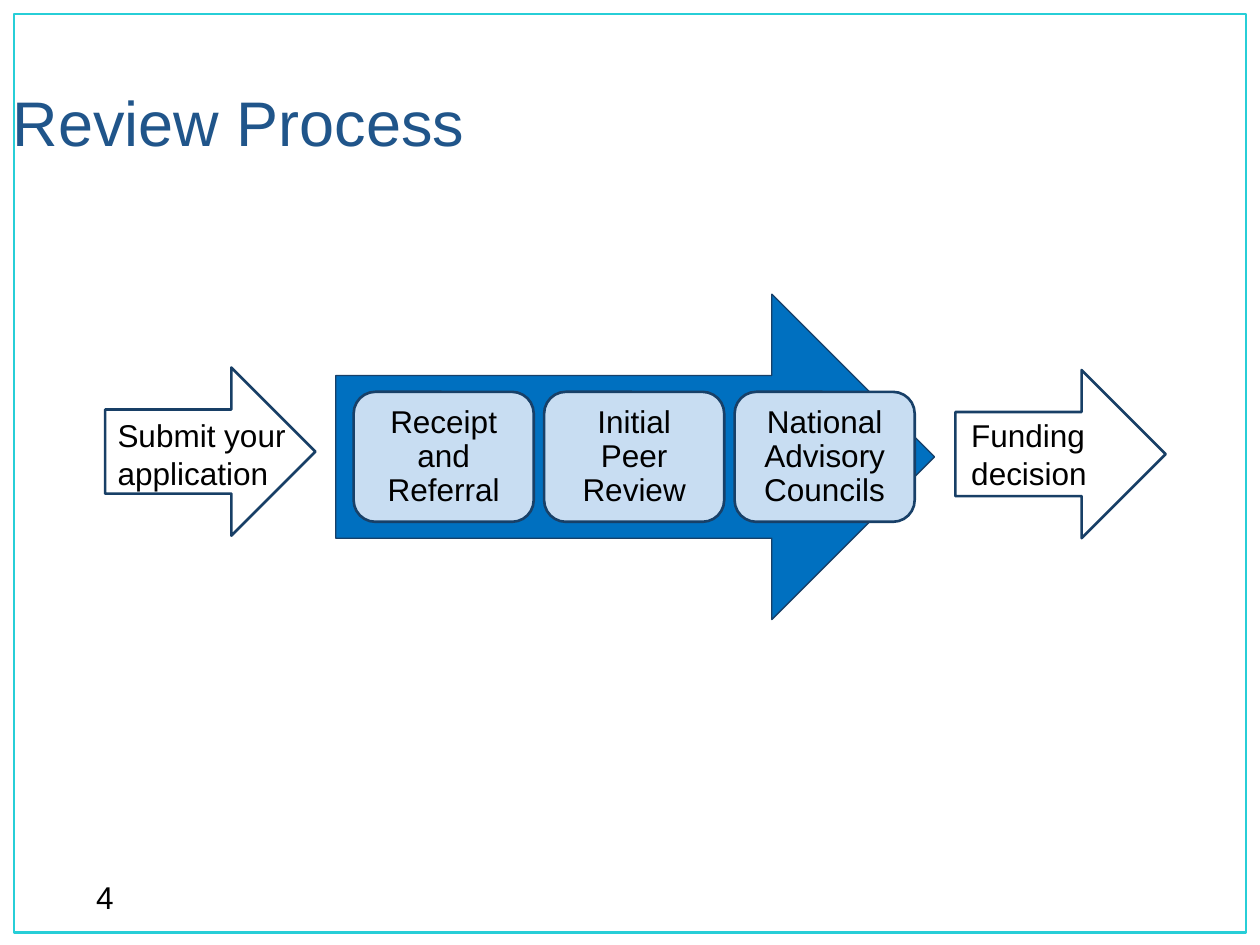
from pptx import Presentation
from pptx.dml.color import RGBColor
from pptx.enum import shapes, text
from pptx.util import Cm, Pt

FONT = "Arial"
NAVY = "184068"
BLUE = "0070C0"
PALE = "C8DDF2"


def colour(value):
    return RGBColor.from_string(value)


def style_font(paragraph, size=18, value="000000"):
    paragraph.font.name = FONT
    paragraph.font.size = Pt(size)
    paragraph.font.color.rgb = colour(value)


def add_outline(slide, kind, box, line, width=1.5, fill=None):
    shape = slide.shapes.add_shape(kind, *(Cm(length) for length in box))
    shape.shadow.inherit = False
    if fill:
        shape.fill.solid()
        shape.fill.fore_color.rgb = colour(fill)
    else:
        shape.fill.background()
    shape.line.color.rgb = colour(line)
    shape.line.width = Pt(width)
    return shape


def add_label(slide, box, lines, wrap=False):
    label = slide.shapes.add_textbox(*(Cm(length) for length in box))
    frame = label.text_frame
    frame.word_wrap = wrap
    frame.text = "\n".join(lines)
    for paragraph in frame.paragraphs:
        style_font(paragraph)
    return frame


def add_title(slide, box, words):
    title = slide.shapes.title
    title.left, title.top, title.width, title.height = (Cm(length) for length in box)
    frame = title.text_frame
    frame.text = words
    frame.vertical_anchor = text.MSO_ANCHOR.MIDDLE
    paragraph = frame.paragraphs[0]
    paragraph.alignment = text.PP_ALIGN.LEFT
    style_font(paragraph, 36, "20558A")


def add_end_arrow(slide, box, lines, label_box):
    """Outlined arrow; label_box is offset from the arrow's corner."""
    left, top, _, _ = box
    offset_x, offset_y, width, height = label_box
    add_outline(slide, shapes.MSO_SHAPE.RIGHT_ARROW, box, "183F66")
    add_label(slide, (left + offset_x, top + offset_y, width, height), lines)


def add_review_stages(slide, box, stages):
    """Large arrow with a row of stage boxes across its middle."""
    left, top, _, height = box
    add_outline(slide, shapes.MSO_SHAPE.RIGHT_ARROW, box, NAVY, 0.75, BLUE)
    stage_width, stage_height, pitch = 3.63, 2.62, 3.84
    stage_top = top + (height - stage_height) / 2
    for index, words in enumerate(stages):
        stage_left = left + 0.36 + index * pitch
        stage = add_outline(slide, shapes.MSO_SHAPE.ROUNDED_RECTANGLE,
                            (stage_left, stage_top, stage_width, stage_height),
                            NAVY, fill=PALE)
        frame = stage.text_frame
        frame.word_wrap = True
        frame.margin_left = frame.margin_right = Cm(0.35)
        frame.margin_top = frame.margin_bottom = Cm(0.3)
        frame.vertical_anchor = text.MSO_ANCHOR.MIDDLE
        frame.text = words
        paragraph = frame.paragraphs[0]
        paragraph.alignment = text.PP_ALIGN.CENTER
        paragraph.line_spacing = 0.9
        style_font(paragraph)


def add_page_number(slide, box, number):
    frame = add_label(slide, box, [number], wrap=True)
    frame.vertical_anchor = text.MSO_ANCHOR.BOTTOM
    frame.paragraphs[0].alignment = text.PP_ALIGN.RIGHT


def main():
    presentation = Presentation()
    presentation.slide_width = Cm(25.4)
    presentation.slide_height = Cm(19.05)
    slide = presentation.slides.add_slide(presentation.slide_layouts[5])

    # Frame and title
    add_outline(slide, shapes.MSO_SHAPE.RECTANGLE, (0.28, 0.28, 24.84, 18.52), "27CED7")
    add_title(slide, (0, 1.27, 25.4, 2.34), "Review Process")

    # Process, from left to right
    add_end_arrow(slide, (2.12, 7.41, 4.24, 3.39), ["Submit your", "application"],
                  (0, 0.85, 3.94, 1.8))
    add_review_stages(slide, (6.77, 5.93, 12.07, 6.56),
                      ["Receipt and Referral", "Initial Peer Review",
                       "National Advisory Councils"])
    add_end_arrow(slide, (19.26, 7.46, 4.24, 3.39), ["Funding", "decision"],
                  (0.07, 0.8, 2.87, 1.8))

    # Page number
    add_page_number(slide, (0.42, 17.57, 2.12, 1.02), "4")

    presentation.save("out.pptx")


if __name__ == "__main__":
    main()
